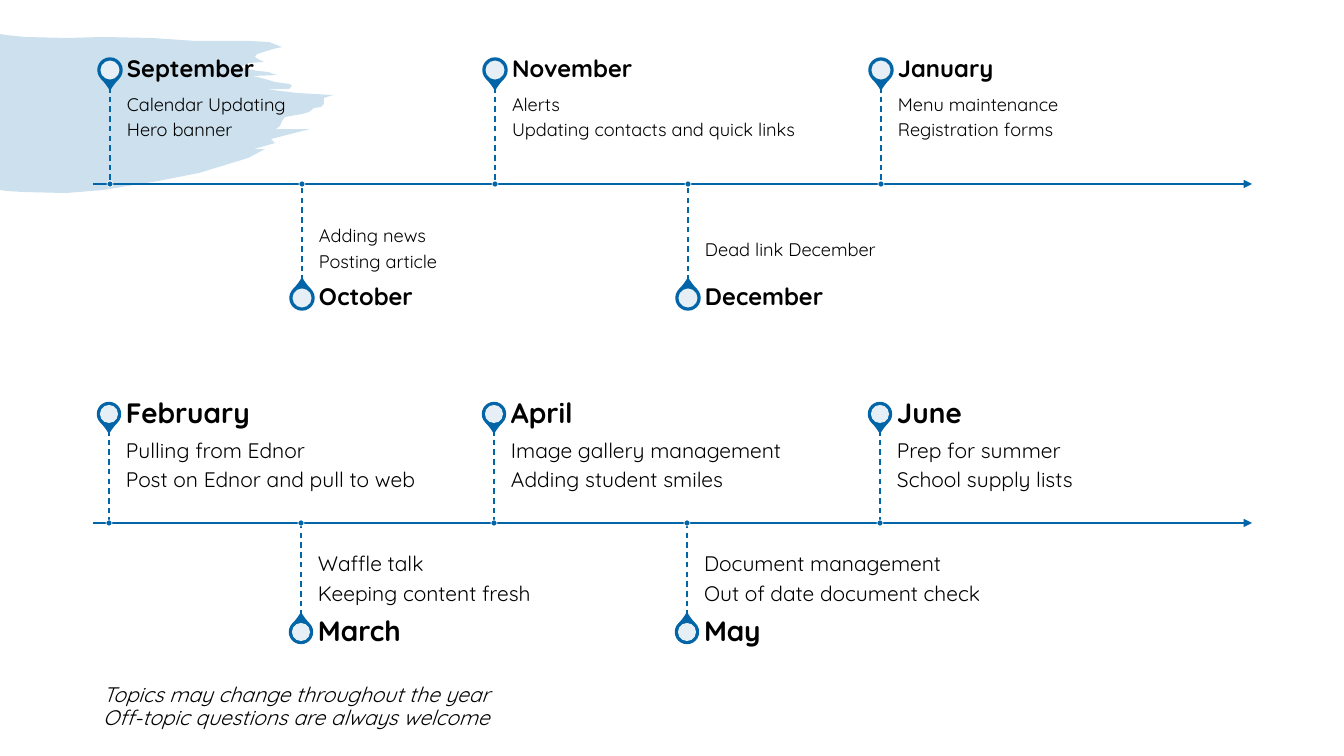
"""Build the school-year topic timeline slide."""
from typing import NamedTuple

from lxml.etree import SubElement
from pptx import Presentation
from pptx.dml.color import RGBColor
from pptx.enum.dml import MSO_LINE
from pptx.enum.shapes import MSO_CONNECTOR, MSO_SHAPE
from pptx.enum.text import MSO_ANCHOR, PP_ALIGN
from pptx.oxml.ns import qn
from pptx.util import Emu, Pt

EMU_PER_PX = 914400 / 100.8
BLUE = RGBColor(0x02, 0x65, 0xA7)
WHITE = RGBColor(0xFF, 0xFF, 0xFF)
BLACK = RGBColor(0x00, 0x00, 0x00)
FONT = "Quicksand"
AXIS_LEFT, AXIS_RIGHT = 93, 1252
MONTHS_SPAN = 771
LABEL_GAP, LABEL_WIDTH = 17, 321
BRUSH_OUTLINE = [
    (0, 34), (6, 35), (25, 37), (67, 38), (103, 37), (152, 38), (196, 41),
    (250, 41), (269, 42), (282, 47), (273, 49), (257, 54), (255, 57), (258, 59),
    (264, 62), (249, 63), (240, 67), (248, 69), (258, 71), (268, 72), (277, 75),
    (253, 76), (265, 79), (275, 82), (282, 83), (290, 84), (292, 86), (289, 89),
    (286, 89), (265, 89), (297, 93), (333, 95), (324, 98), (324, 104), (321, 107),
    (314, 108), (309, 112), (302, 114), (285, 117), (282, 121), (280, 126),
    (276, 129), (310, 129), (271, 139), (275, 143), (254, 149), (265, 149),
    (248, 158), (199, 173), (158, 181), (103, 190), (66, 193), (23, 192),
    (7, 191), (0, 190),
]


class Term(NamedTuple):
    """Measures in px and text sizes in points of one timeline."""
    axis: int
    first_month: int
    stem: int
    pin_distance: int
    pin: int
    heading_height: int
    heading_size: int
    topic_size: int
    line_pitch: int
    stem_inset: int
    axis_inset: int
    heading_inset: int
    months: list


FALL = Term(184, 110, 97, 114, 24, 34, 17, 13, 26, 9, 14, 12, [
    ("September", ["Calendar Updating", "Hero banner"]),
    ("October", ["Adding news", "Posting article"]),
    ("November", ["Alerts", "Updating contacts and quick links"]),
    ("December", ["Dead link December"]),
    ("January", ["Menu maintenance", "Registration forms"]),
])
SPRING = Term(523, 109, 93, 109, 23, 32, 20, 15, 30, 10, 16, 14, [
    ("February", ["Pulling from Ednor", "Post on Ednor and pull to web"]),
    ("March", ["Waffle talk", "Keeping content fresh"]),
    ("April", ["Image gallery management", "Adding student smiles"]),
    ("May", ["Document management", "Out of date document check"]),
    ("June", ["Prep for summer", "School supply lists"]),
])


def px(length):
    """Turn px into EMU."""
    return Emu(round(length * EMU_PER_PX))


def paint(shape, color, opacity=100, outline=None, outline_width=1):
    """Give a shape its fill, opacity and outline, without a shadow."""
    shape.shadow.inherit = False
    shape.fill.solid()
    shape.fill.fore_color.rgb = color
    if opacity < 100:
        srgb = shape.fill._xPr.find(qn("a:solidFill"))[0]
        SubElement(srgb, qn("a:alpha"), val=str(opacity * 1000))
    if outline is None:
        shape.line.fill.background()
    else:
        shape.line.color.rgb = outline
        shape.line.width = Pt(outline_width)


def add_round(shapes, kind, x, y, size, color, **look):
    """Add a preset shape centred on a point."""
    mark = shapes.add_shape(kind, px(x - size / 2), px(y - size / 2), px(size), px(size))
    paint(mark, color, **look)
    return mark


def add_rule(shapes, start, end, width, dashed=False, arrow=False):
    """Add a straight blue line, dashed or ending in an arrowhead."""
    rule = shapes.add_connector(MSO_CONNECTOR.STRAIGHT, *map(px, start + end))
    rule.line.color.rgb = BLUE
    rule.line.width = Pt(width)
    if dashed:
        rule.line.dash_style = MSO_LINE.DASH
    if arrow:
        SubElement(rule.line._get_or_add_ln(), qn("a:tailEnd"), type="triangle")
    SubElement(rule._element.spPr, qn("a:effectLst"))


def add_text(shapes, box, lines, size, anchor=MSO_ANCHOR.MIDDLE,
             insets=(0, 0, 0, 0), bold=False, italic=False, space_after=0):
    """Add a text box with one paragraph per line."""
    frame = shapes.add_textbox(*map(px, box)).text_frame
    frame.word_wrap = True
    frame.vertical_anchor = anchor
    (frame.margin_left, frame.margin_top,
     frame.margin_right, frame.margin_bottom) = map(px, insets)
    for index, line in enumerate(lines):
        paragraph = frame.add_paragraph() if index else frame.paragraphs[0]
        paragraph.alignment = PP_ALIGN.LEFT
        paragraph.line_spacing = 0.9
        paragraph.space_after = Pt(space_after)
        run = paragraph.add_run()
        run.text = line
        run.font.name = FONT
        run.font.size = Pt(size)
        run.font.bold = bold
        run.font.italic = italic
        run.font.color.rgb = BLACK


def add_brush(shapes):
    """Add the pale brush stroke at the left edge."""
    builder = shapes.build_freeform(*BRUSH_OUTLINE[0], scale=EMU_PER_PX)
    builder.add_line_segments(BRUSH_OUTLINE[1:], close=True)
    paint(builder.convert_to_shape(), BLUE, opacity=20)


def add_month(shapes, term, x, month, topics, above):
    """Add one month's pin, labels, stem and axis dot."""
    side = -1 if above else 1
    pin_y = term.axis + side * term.pin_distance
    stem_end = term.axis + side * term.stem
    label_left = x + LABEL_GAP

    pin = add_round(shapes, MSO_SHAPE.TEAR, x, pin_y, term.pin, BLUE, outline=BLUE)
    pin.adjustments[0] = 1.15
    pin.rotation = 135 if above else 315
    add_round(shapes, MSO_SHAPE.OVAL, x, pin_y, term.pin - 5, WHITE, opacity=90)

    if above:
        anchor = MSO_ANCHOR.TOP
        insets = (0, term.stem_inset, term.stem_inset, term.axis_inset)
    else:
        anchor = MSO_ANCHOR.BOTTOM
        free_line = term.line_pitch * (2 - len(topics))
        insets = (0, term.axis_inset, 0, term.stem_inset + free_line)
    add_text(shapes, (label_left, min(term.axis, stem_end), LABEL_WIDTH, term.stem),
             topics, term.topic_size, anchor=anchor, insets=insets,
             space_after=round(term.topic_size / 3))
    add_text(shapes, (label_left, pin_y - term.heading_height // 2,
                      LABEL_WIDTH, term.heading_height),
             [month], term.heading_size, bold=True,
             insets=(0, 0, term.heading_inset, 0),
             space_after=round(term.heading_size / 3))

    add_rule(shapes, (x, stem_end), (x, term.axis), 1, dashed=True)
    add_round(shapes, MSO_SHAPE.OVAL, x, term.axis, 6, BLUE,
              outline=WHITE, outline_width=0.5)


def add_timeline(shapes, term):
    """Add one grouped timeline with months alternating above and below."""
    members = shapes.add_group_shape().shapes
    add_rule(members, (AXIS_LEFT, term.axis), (AXIS_RIGHT, term.axis), 1.5, arrow=True)
    gaps = len(term.months) - 1
    for index, (month, topics) in enumerate(term.months):
        x = term.first_month + MONTHS_SPAN * index // gaps
        add_month(members, term, x, month, topics, above=index % 2 == 0)


def main():
    """Build and save the slide."""
    deck = Presentation()
    deck.slide_width, deck.slide_height = px(1344), px(756)
    shapes = deck.slides.add_slide(deck.slide_layouts[6]).shapes
    add_brush(shapes)
    add_timeline(shapes, FALL)
    add_text(shapes, (93, 658, 807, 98),
             ["Topics may change throughout the year",
              "Off-topic questions are always welcome"],
             15, insets=(10, 5, 10, 5), italic=True)
    add_timeline(shapes, SPRING)
    deck.save("out.pptx")


if __name__ == "__main__":
    main()
